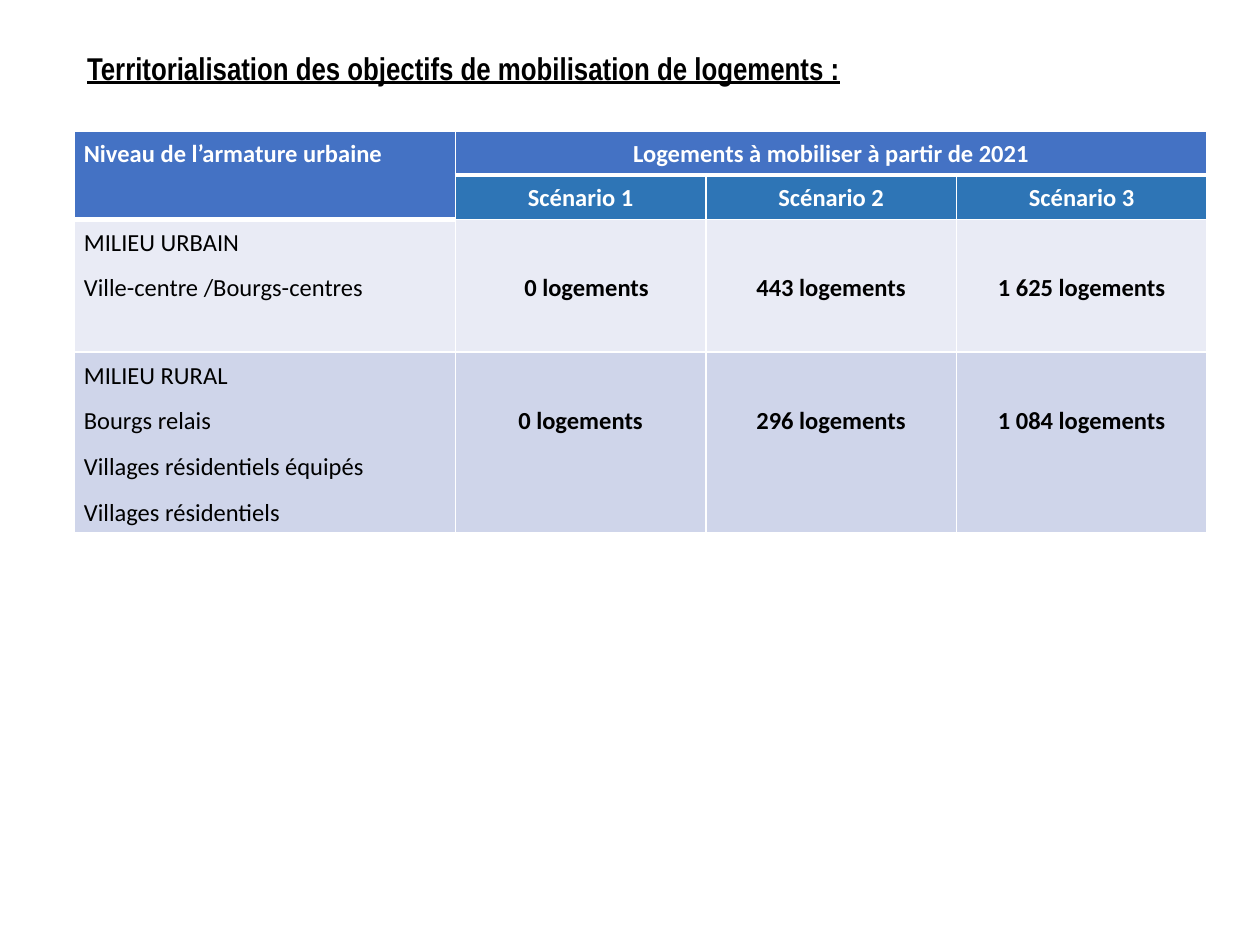
import pptx
import pptx.dml.color
import pptx.enum.text
import pptx.oxml
import pptx.oxml.ns
import pptx.util

Cm = pptx.util.Cm
Pt = pptx.util.Pt
RGBColor = pptx.dml.color.RGBColor
ALIGN = pptx.enum.text.PP_ALIGN

WHITE = RGBColor(0xFF, 0xFF, 0xFF)
BLACK = RGBColor(0x00, 0x00, 0x00)
HEADER_BLUE = RGBColor(0x44, 0x72, 0xC4)
SCENARIO_BLUE = RGBColor(0x2E, 0x75, 0xB6)
URBAN_FILL = RGBColor(0xE9, 0xEB, 0xF5)
RURAL_FILL = RGBColor(0xCF, 0xD5, 0xEA)


def add_border(cell, side, width):
    line = pptx.oxml.parse_xml(
        f'<a:ln{side} {pptx.oxml.ns.nsdecls("a")} w="{Pt(width)}">'
        f'<a:solidFill><a:srgbClr val="{WHITE}"/></a:solidFill></a:ln{side}>')
    cell._tc.get_or_add_tcPr().append(line)


def format_cell(cell, text, fill, color, bold, alignment):
    cell.fill.solid()
    cell.fill.fore_color.rgb = fill
    cell.margin_left = cell.margin_right = Cm(0.19)
    cell.margin_top = Cm(0.13)
    cell.margin_bottom = 0
    cell.text_frame.text = text
    for paragraph in cell.text_frame.paragraphs:
        paragraph.alignment = alignment
        paragraph.line_spacing = 1.07
        paragraph.space_after = Pt(8)
        paragraph.font.size = Pt(14)
        for run in paragraph.runs:
            run.font.name = "Calibri"
            run.font.size = Pt(14)
            run.font.bold = bold
            run.font.color.rgb = color


presentation = pptx.Presentation()
presentation.slide_width = Cm(25.4)
presentation.slide_height = Cm(19.05)
slide = presentation.slides.add_slide(presentation.slide_layouts[5])

# Title
title = slide.shapes.title
title.left, title.top, title.width, title.height = Cm(1.5), Cm(0.86), Cm(22.83), Cm(1.02)
title.text_frame.text = "Territorialisation des objectifs de mobilisation de logements :"
title.text_frame.auto_size = pptx.enum.text.MSO_AUTO_SIZE.NONE
title.text_frame.vertical_anchor = pptx.enum.text.MSO_ANCHOR.MIDDLE
paragraph = title.text_frame.paragraphs[0]
paragraph.alignment = ALIGN.JUSTIFY
font = paragraph.runs[0].font
font.name = "Arial Narrow"
font.size = Pt(18)
font.bold = True
font.underline = True
font.color.rgb = BLACK

# Table grid
column_widths = [7.68, 5.05, 5.05, 5.05]
row_heights = [0.89, 0.89, 2.68, 3.63]
table = slide.shapes.add_table(
    len(row_heights), len(column_widths), Cm(1.5), Cm(2.64),
    Cm(sum(column_widths)), Cm(sum(row_heights))).table
table.first_row = False
table.horz_banding = False
for column, width in zip(table.columns, column_widths):
    column.width = Cm(width)
for row, height in zip(table.rows, row_heights):
    row.height = Cm(height)

# White borders, thicker under the top header cells
for row_index in range(len(row_heights)):
    for column_index in range(len(column_widths)):
        cell = table.cell(row_index, column_index)
        thick = row_index == 0 or (row_index == 1 and column_index == 0)
        add_border(cell, "L", 1)
        add_border(cell, "R", 1)
        if row_index == 0:
            add_border(cell, "T", 1)
        add_border(cell, "B", 3 if thick else 1)

# Headers
table.cell(0, 0).merge(table.cell(1, 0))
table.cell(0, 1).merge(table.cell(0, 3))
format_cell(table.cell(0, 0), "Niveau de l’armature urbaine",
            HEADER_BLUE, WHITE, True, ALIGN.LEFT)
format_cell(table.cell(0, 1), "Logements à mobiliser à partir de 2021",
            HEADER_BLUE, WHITE, True, ALIGN.CENTER)
for number in range(1, 4):
    format_cell(table.cell(1, number), f"Scénario {number}",
                SCENARIO_BLUE, WHITE, True, ALIGN.CENTER)

# Housing targets, level with the second line of each label
areas = [
    (["MILIEU URBAIN", "Ville-centre /Bourgs-centres"],
     ["0", "443", "1 625"], URBAN_FILL),
    (["MILIEU RURAL", "Bourgs relais", "Villages résidentiels équipés",
      "Villages résidentiels"],
     ["0", "296", "1 084"], RURAL_FILL),
]
for row_index, (labels, values, fill) in enumerate(areas, start=2):
    format_cell(table.cell(row_index, 0), "\n".join(labels),
                fill, BLACK, False, ALIGN.JUSTIFY)
    for column_index, value in enumerate(values, start=1):
        cell = table.cell(row_index, column_index)
        format_cell(cell, f"{value} logements", fill, BLACK, True, ALIGN.CENTER)
        cell.margin_top = Cm(1.05)
table.cell(2, 1).margin_left = Cm(0.43)

presentation.save("out.pptx")
